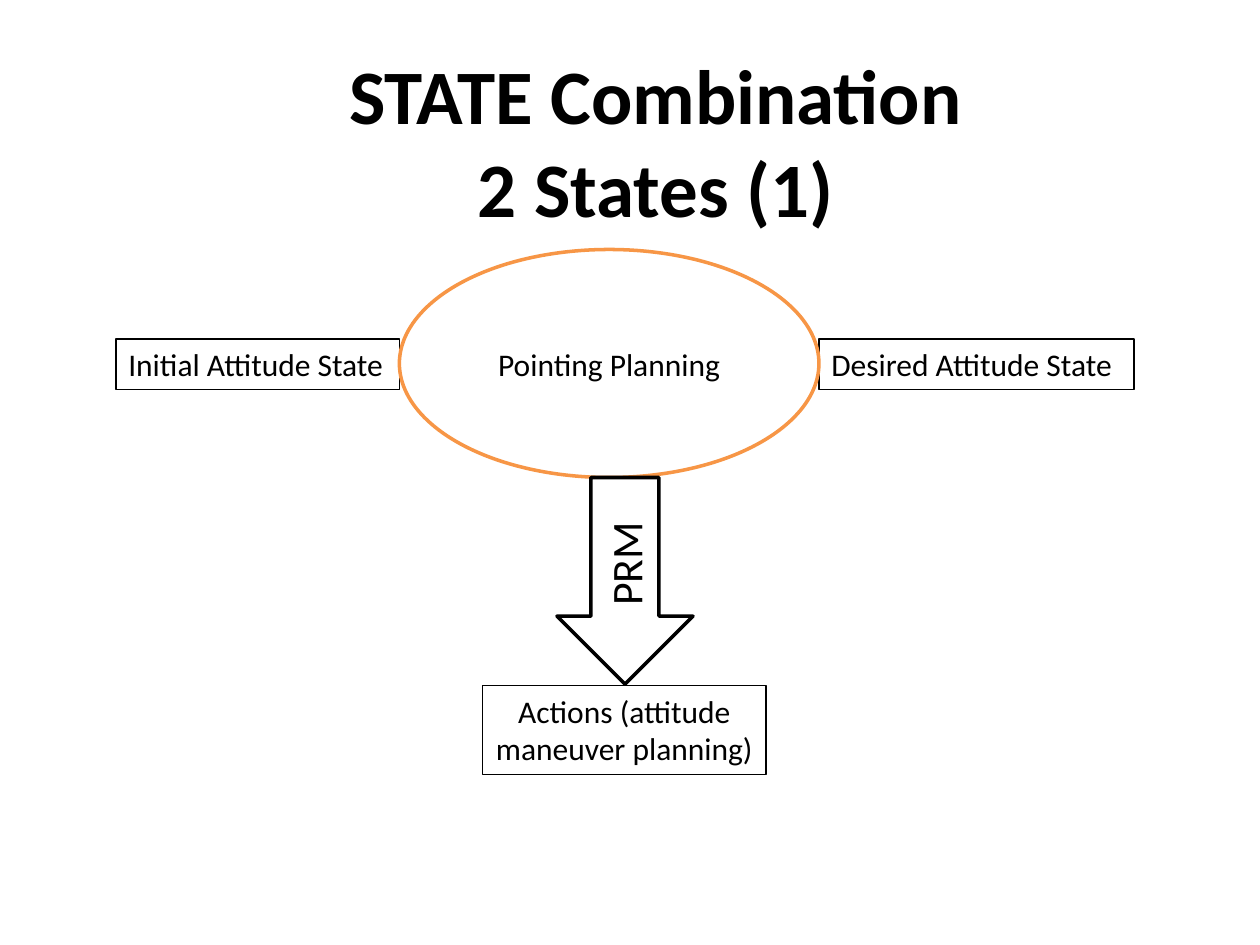
import pptx
import pptx.util
import pptx.dml.color
import pptx.enum.shapes
import pptx.enum.text

Inches = pptx.util.Inches
Pt = pptx.util.Pt
SHAPE = pptx.enum.shapes.MSO_SHAPE
ALIGN = pptx.enum.text.PP_ALIGN
ANCHOR = pptx.enum.text.MSO_ANCHOR

BLACK = pptx.dml.color.RGBColor(0x00, 0x00, 0x00)
WHITE = pptx.dml.color.RGBColor(0xFF, 0xFF, 0xFF)
ORANGE = pptx.dml.color.RGBColor(0xF7, 0x96, 0x46)


def write(frame, text, size, align, anchor, bold=False):
    """Fill a text frame with one paragraph and format it."""
    frame.text = text
    frame.word_wrap = True
    frame.auto_size = pptx.enum.text.MSO_AUTO_SIZE.NONE
    frame.vertical_anchor = anchor
    paragraph = frame.paragraphs[0]
    paragraph.alignment = align
    for run in paragraph.runs:
        run.font.name = "Calibri"
        run.font.size = Pt(size)
        run.font.bold = bold
        run.font.color.rgb = BLACK


def add_node(kind, box, text, line_color, line_width, size=18,
             align=ALIGN.CENTER, anchor=ANCHOR.MIDDLE):
    """Add an unfilled outlined shape with a label."""
    node = slide.shapes.add_shape(kind, *[Inches(v) for v in box])
    node.shadow.inherit = False
    node.fill.background()
    node.line.color.rgb = line_color
    node.line.width = Pt(line_width)
    write(node.text_frame, text, size, align, anchor)
    return node


prs = pptx.Presentation()
prs.slide_width = Inches(10)
prs.slide_height = Inches(7.5)
slide = prs.slides.add_slide(prs.slide_layouts[5])

title = slide.shapes.title
title.left, title.top = Inches(2.33), Inches(0.33)
title.width, title.height = Inches(5.75), Inches(1.58)
write(title.text_frame, "STATE Combination\v2 States (1)", 44,
      ALIGN.CENTER, ANCHOR.TOP, bold=True)

# The two states touch the sides of the planning ellipse
for box, state in [
    ((0.92, 2.69, 2.25, 0.4), "Initial Attitude State"),
    ((6.5, 2.69, 2.5, 0.4), "Desired Attitude State"),
]:
    add_node(SHAPE.RECTANGLE, box, state, BLACK, 0.75,
             align=ALIGN.LEFT, anchor=ANCHOR.TOP)

planning = add_node(SHAPE.OVAL, (3.17, 1.98, 3.33, 1.81),
                    "Pointing Planning", ORANGE, 2)
frame = planning.text_frame
frame.margin_left = frame.margin_right = 0
frame.margin_top = frame.margin_bottom = 0

prm_arrow = add_node(SHAPE.DOWN_ARROW, (4.42, 3.79, 1.08, 1.64),
                     "PRM", BLACK, 2, size=25)
prm_arrow.fill.solid()
prm_arrow.fill.fore_color.rgb = WHITE
prm_arrow.text_frame._txBody.bodyPr.set("vert", "vert270")

add_node(SHAPE.RECTANGLE, (3.83, 5.44, 2.25, 0.71),
         "Actions (attitude maneuver planning)", BLACK, 0.75,
         anchor=ANCHOR.TOP)

prs.save("out.pptx")
